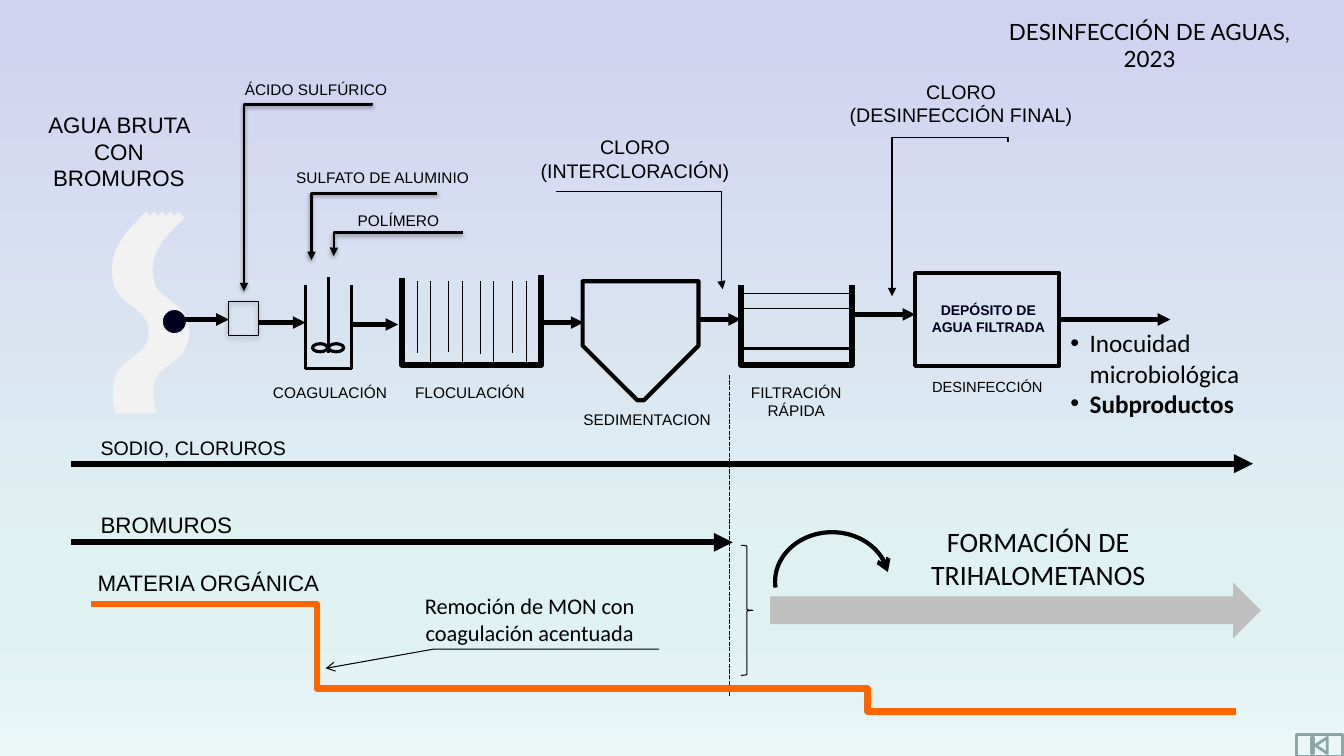
from dataclasses import dataclass

from lxml import etree
from pptx import Presentation
from pptx.dml.color import RGBColor
from pptx.enum.dml import MSO_LINE
from pptx.enum.shapes import MSO_CONNECTOR, MSO_SHAPE
from pptx.enum.text import MSO_ANCHOR, MSO_AUTO_SIZE, PP_ALIGN
from pptx.oxml.ns import qn
from pptx.util import Inches, Pt

LEFT, CENTER = PP_ALIGN.LEFT, PP_ALIGN.CENTER
STRAIGHT, ELBOW = MSO_CONNECTOR.STRAIGHT, MSO_CONNECTOR.ELBOW
RECTANGLE, ELLIPSE = MSO_SHAPE.RECTANGLE, MSO_SHAPE.OVAL
DASHED = MSO_LINE.SQUARE_DOT
TITLE_AND_CONTENT = 1


@dataclass(frozen=True)
class Theme:
    ink: str = "000000"
    navy: str = "00001C"
    river: str = "F2F2F2"
    organic: str = "FF6600"
    band: str = "BFBFBF"
    button: str = "8AA6A8"
    sky: tuple = ((0, "D1D1F0"), (74, "E0F1F2"), (83, "E0F1F2"), (100, "EBF6F7"))
    sans: str = "Arial"
    body: str = "Calibri"
    heading: str = "Lato"
    tiny: float = 10
    small: float = 10.5
    label: float = 11
    medium: float = 14
    large: float = 16
    bullet: float = 18
    headline: float = 20


THEME = Theme()


def add_child(parent, tag, **attributes):
    return etree.SubElement(parent, qn(tag), {key: str(value) for key, value in attributes.items()})


def paint_background(slide):
    fill = slide.background.fill
    fill.gradient()
    fill.gradient_angle = 270
    stops = slide.element.find(".//" + qn("a:gsLst"))
    for stop in list(stops):
        stops.remove(stop)
    for position, color in THEME.sky:
        stop = add_child(stops, "a:gs", pos=position * 1000)
        add_child(stop, "a:srgbClr", val=color)


def write_run(paragraph, text, size, font, color=THEME.ink, bold=False):
    run = paragraph.add_run()
    run.text = text
    run.font.size = Pt(size)
    run.font.name = font
    run.font.bold = bold
    run.font.color.rgb = RGBColor.from_string(color)


def place(shape, box):
    shape.left, shape.top, shape.width, shape.height = map(Inches, box)
    frame = shape.text_frame
    frame.word_wrap = True
    frame.auto_size = MSO_AUTO_SIZE.NONE
    frame.vertical_anchor = MSO_ANCHOR.TOP
    return frame


def add_label(slide, box, text, size=THEME.label, align=LEFT, font=THEME.sans, **style):
    frame = place(slide.shapes.add_textbox(0, 0, 0, 0), box)
    paragraph = frame.paragraphs[0]
    paragraph.alignment = align
    write_run(paragraph, text, size, font, **style)


def fill_title(slide):
    paragraph = place(slide.shapes.title, (9.82, 0.13, 3.17, 0.37)).paragraphs[0]
    paragraph.alignment = CENTER
    write_run(paragraph, "DESINFECCIÓN DE AGUAS, 2023", THEME.large, THEME.heading)


def fill_results(slide):
    frame = place(slide.placeholders[1], (10.52, 3.2, 2.19, 1.01))
    results = (("Inocuidad microbiológica", False), ("Subproductos", True))
    for index, (text, bold) in enumerate(results):
        paragraph = frame.paragraphs[0] if index == 0 else frame.add_paragraph()
        paragraph.space_before = Pt(0)
        properties = paragraph._p.get_or_add_pPr()
        properties.set("marL", str(Inches(0.19)))
        properties.set("indent", str(Inches(-0.19)))
        add_child(properties, "a:buFont", typeface=THEME.sans)
        add_child(properties, "a:buChar", char="•")
        write_run(paragraph, text, THEME.bullet, THEME.body, bold=bold)


def finish(shape, width, color=THEME.ink, arrow=None, dash=None, shadow=False):
    shape.line.color.rgb = RGBColor.from_string(color)
    shape.line.width = Pt(width)
    if dash:
        shape.line.dash_style = dash
    properties = shape.element.spPr
    if arrow:
        add_child(properties.find(qn("a:ln")), "a:tailEnd", type=arrow)
    effects = properties.find(qn("a:effectLst"))
    if effects is None:
        effects = add_child(properties, "a:effectLst")
    if shadow:
        outer = add_child(effects, "a:outerShdw", blurRad=Pt(3.1), dist=Pt(1.6),
                          dir=5400000, rotWithShape=0)
        tint = add_child(outer, "a:srgbClr", val=THEME.ink)
        add_child(tint, "a:alpha", val=38000)


def add_line(slide, start, end, width, **style):
    connector = slide.shapes.add_connector(STRAIGHT, *map(Inches, start + end))
    finish(connector, width, **style)


def add_elbow(slide, box, width, bend=None, turn=0, flip=False, **style):
    left, top, across, down = box
    connector = slide.shapes.add_connector(
        ELBOW, *map(Inches, (left, top, left + across, top + down)))
    frame = connector.element.spPr.find(qn("a:xfrm"))
    if turn:
        frame.set("rot", str(turn * 60000))
    if flip:
        frame.set("flipV", "1")
    geometry = connector.element.spPr.find(qn("a:prstGeom"))
    if bend is None:
        geometry.set("prst", "bentConnector2")
    else:
        guides = geometry.find(qn("a:avLst"))
        if guides is None:
            guides = add_child(geometry, "a:avLst")
        add_child(guides, "a:gd", name="adj1", fmla=f"val {round(bend * 100000)}")
    finish(connector, width, **style)


def add_figure(slide, kind, box, width=0, fill=None, adjustments=(), **style):
    shape = slide.shapes.add_shape(kind, *map(Inches, box))
    shape.shadow.inherit = False
    for index, value in enumerate(adjustments):
        shape.adjustments[index] = value
    if fill:
        shape.fill.solid()
        shape.fill.fore_color.rgb = RGBColor.from_string(fill)
    else:
        shape.fill.background()
    if width:
        finish(shape, width, **style)
    else:
        shape.line.fill.background()
    return shape


def add_outline(slide, points, width, **style):
    start, *rest = [(Inches(x), Inches(y)) for x, y in points]
    builder = slide.shapes.build_freeform(*start)
    builder.add_line_segments(rest, close=False)
    shape = builder.convert_to_shape()
    shape.shadow.inherit = False
    shape.fill.background()
    finish(shape, width, **style)
    return shape


def bend_outline(shape):
    segments = list(shape.element.iter(qn("a:lnTo")))
    for first in range(0, len(segments), 3):
        curve = etree.Element(qn("a:cubicBezTo"))
        segments[first].addprevious(curve)
        for segment in segments[first:first + 3]:
            curve.append(segment[0])
            segment.getparent().remove(segment)


def draw_river(slide):
    bank = [
        (1.48, 2.13), (1.36, 2.25), (1.24, 2.37), (1.19, 2.49), (1.14, 2.61), (1.14, 2.75),
        (1.19, 2.86), (1.24, 2.97), (1.44, 3.05), (1.48, 3.15), (1.53, 3.24), (1.53, 3.34),
        (1.48, 3.44), (1.44, 3.54), (1.24, 3.62), (1.19, 3.73), (1.14, 3.84), (1.16, 3.97),
        (1.19, 4.1)]
    for strand in range(5):
        points = [(x + strand * 0.08, y) for x, y in bank]
        bend_outline(add_outline(slide, points, 6, color=THEME.river))
    add_figure(slide, ELLIPSE, (1.61, 3.07, 0.24, 0.24), 0.75, THEME.navy, color=THEME.river)


def draw_tanks(slide):
    add_figure(slide, RECTANGLE, (2.27, 2.99, 0.29, 0.34), 0.75, shadow=True)
    for start, end in (((3.03, 3.66), (3.49, 3.66)), ((3.03, 2.83), (3.03, 3.66)),
                       ((3.49, 2.83), (3.49, 3.66)), ((3.26, 3.5), (3.26, 2.75))):
        add_line(slide, start, end, 2.25)
    for blade in (3.1, 3.26):
        add_figure(slide, ELLIPSE, (blade, 3.41, 0.15, 0.08), 2.25)
    for x, bottom in ((4.14, 3.5), (4.27, 3.62), (4.45, 3.49), (4.59, 3.61),
                      (4.77, 3.51), (4.9, 3.63), (5.08, 3.5), (5.22, 3.62)):
        add_line(slide, (x, 2.79), (x, bottom), 0.75)
    add_outline(slide, [(3.99, 2.76), (3.99, 3.62), (5.37, 3.62), (5.37, 2.73)], 4.5)
    settler = add_figure(slide, MSO_SHAPE.SNIP_2_SAME_RECTANGLE, (5.78, 2.79, 1.15, 1.18), 3,
                         adjustments=(0.471, 0))
    settler.rotation = 180
    for top, height, width in ((2.91, 0.55, 1), (3.46, 0.16, 2.25), (3.06, 0.39, 0.75)):
        add_figure(slide, RECTANGLE, (7.35, top, 1.1, height), width)
    add_outline(slide, [(7.35, 2.83), (7.35, 3.62), (8.45, 3.62), (8.45, 2.83)], 4.5)
    add_figure(slide, RECTANGLE, (9.08, 2.71, 1.43, 0.92), 3)
    for start, end, y in ((1.82, 2.27, 3.17), (2.57, 3.03, 3.2), (3.5, 3.95, 3.22),
                          (5.38, 5.79, 3.2), (6.93, 7.35, 3.17), (8.43, 9.08, 3.12),
                          (10.51, 11.61, 3.17)):
        add_line(slide, (start, y), (end, y), 3, arrow="triangle")


def draw_doses(slide):
    for box, width, bend, turn, flip, shadow in (
            ((3.09, 1.92, 1.25, 0.66), 2, None, 180, True, True),
            ((3.31, 2.31, 1.28, 0.23), 2, 0.998, 180, True, True),
            ((2.12, 1.32, 1.87, 1.27), 2, 0.008, 90, False, True),
            ((5.52, 1.9, 1.65, 0.97), 1, 0.993, 0, False, False),
            ((8.66, 1.6, 1.53, 1.15), 1, -0.03, 90, False, False)):
        add_elbow(slide, box, width, bend, turn, flip, arrow="triangle", shadow=shadow)


def draw_trends(slide):
    add_line(slide, (7.24, 3.72), (7.24, 6.9), 1, dash=DASHED)
    add_figure(slide, MSO_SHAPE.RIGHT_ARROW, (7.64, 5.78, 4.87, 0.55), fill=THEME.band)
    for y, end in ((4.6, 12.43), (5.38, 7.27)):
        add_line(slide, (0.7, y), (end, y), 4.5, arrow="triangle")
    add_figure(slide, MSO_SHAPE.RIGHT_BRACE, (7.35, 5.41, 0.12, 1.29), 0.75)
    add_outline(slide, [(6.54, 6.44), (4.3, 6.44), (3.23, 6.63)], 0.75, arrow="arrow")
    add_elbow(slide, (0.9, 5.99, 7.63, 0.84), 4.5, 0.294, color=THEME.organic)
    add_elbow(slide, (7.98, 6.83, 4.28, 0.23), 4.5, 0.146, color=THEME.organic)
    add_figure(slide, MSO_SHAPE.ARC, (7.69, 5.28, 1.13, 0.98), 3,
               adjustments=(104.382, 210.178), arrow="arrow")


def write_labels(slide):
    for box, text in (((2.33, 0.75, 2.01, 0.29), "ÁCIDO SULFÚRICO"),
                      ((2.84, 1.62, 2.01, 0.29), "SULFATO DE ALUMINIO"),
                      ((3.45, 2.04, 1.12, 0.29), "POLÍMERO"),
                      ((2.61, 3.75, 1.42, 0.29), "COAGULACIÓN"),
                      ((4.02, 3.75, 1.47, 0.29), "FLOCULACIÓN"),
                      ((5.69, 4.02, 1.66, 0.29), "SEDIMENTACION")):
        add_label(slide, box, text)
    add_label(slide, (7.19, 3.75, 1.42, 0.47), "FILTRACIÓN RÁPIDA", align=CENTER)
    add_label(slide, (9.15, 3.7, 1.34, 0.28), "DESINFECCIÓN", THEME.small)
    add_label(slide, (9.09, 2.94, 1.43, 0.44), "DEPÓSITO DE AGUA FILTRADA", THEME.tiny, CENTER,
              color=THEME.navy, bold=True)
    add_label(slide, (0.36, 1.05, 1.64, 0.91), "AGUA BRUTA CON BROMUROS", THEME.large, CENTER)
    add_label(slide, (5.22, 1.29, 2.16, 0.57), "CLORO (INTERCLORACIÓN)", THEME.medium, CENTER)
    add_label(slide, (8.3, 0.74, 2.47, 0.57), "CLORO (DESINFECCIÓN FINAL)", THEME.medium, CENTER)
    add_label(slide, (0.9, 4.28, 2.43, 0.34), "SODIO, CLORUROS", THEME.medium)
    add_label(slide, (0.9, 5.02, 2.43, 0.37), "BROMUROS", THEME.large)
    add_label(slide, (0.87, 5.6, 2.43, 0.37), "MATERIA ORGÁNICA", THEME.large)
    add_label(slide, (4.02, 5.83, 2.47, 0.64), "Remoción de MON con coagulación acentuada",
              THEME.large, CENTER, THEME.body)
    add_label(slide, (8.63, 5.15, 3.34, 0.77), "FORMACIÓN DE TRIHALOMETANOS",
              THEME.headline, CENTER, THEME.body)


def main():
    presentation = Presentation()
    presentation.slide_width, presentation.slide_height = Inches(40 / 3), Inches(7.5)
    slide = presentation.slides.add_slide(presentation.slide_layouts[TITLE_AND_CONTENT])
    paint_background(slide)
    fill_title(slide)
    fill_results(slide)
    add_figure(slide, MSO_SHAPE.ACTION_BUTTON_BEGINNING, (12.86, 7.29, 0.46, 0.21), 2,
               color=THEME.button)
    draw_river(slide)
    draw_tanks(slide)
    draw_doses(slide)
    draw_trends(slide)
    write_labels(slide)
    presentation.save("out.pptx")


if __name__ == "__main__":
    main()
